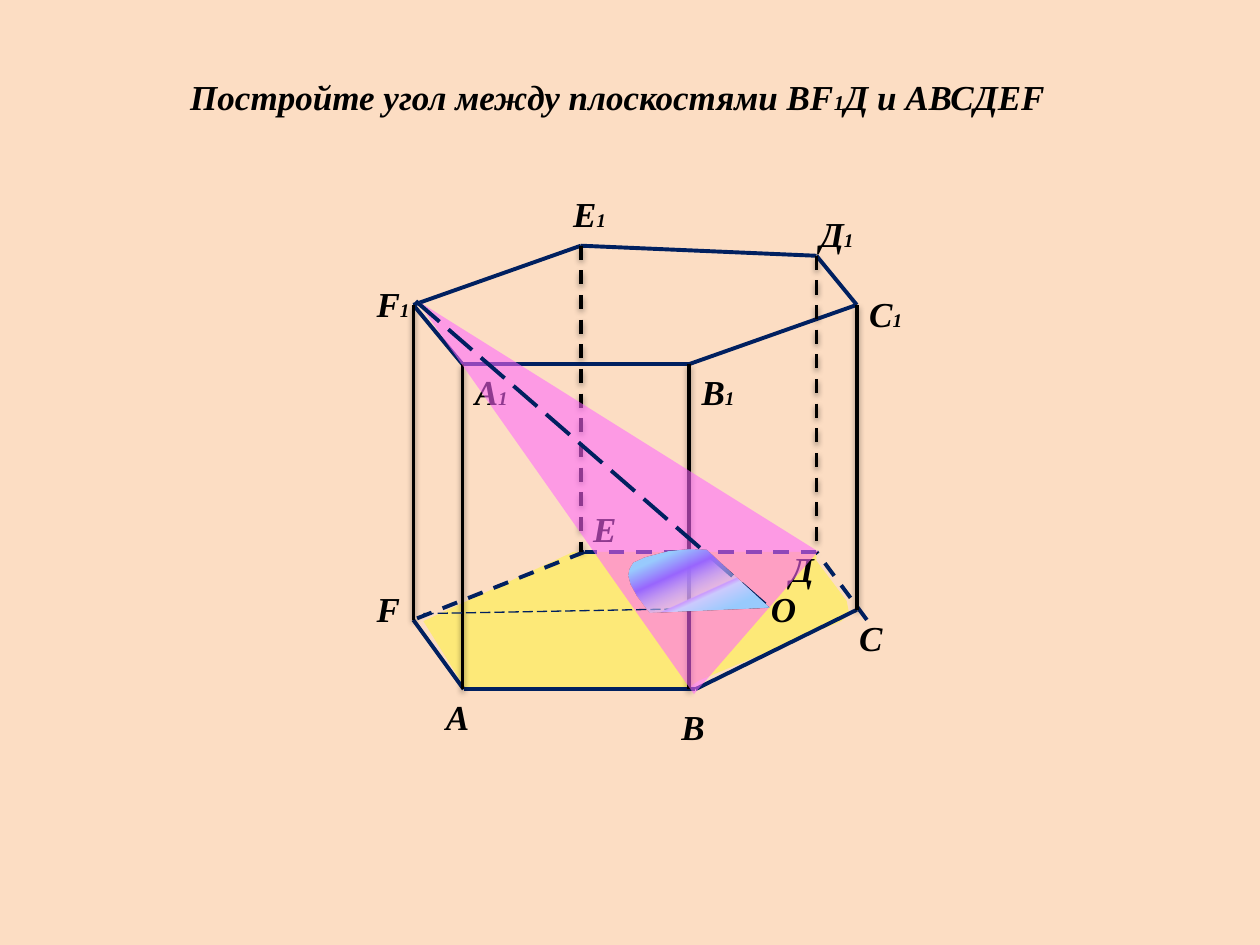
import pptx
import pptx.util
import pptx.dml.color
import pptx.enum.dml
import pptx.enum.shapes
import pptx.enum.text
import pptx.oxml
import pptx.oxml.ns

NAVY, BLACK = "002060", "000000"
DASH = pptx.enum.dml.MSO_LINE.DASH
LONG_DASH = pptx.enum.dml.MSO_LINE.LONG_DASH
NS = pptx.oxml.ns.nsdecls("a")


def paint(fill, color, alpha=None):
    fill.solid()
    fill.fore_color.rgb = pptx.dml.color.RGBColor.from_string(color)
    if alpha is not None:
        clr = fill._xPr.find(".//" + pptx.oxml.ns.qn("a:srgbClr"))
        clr.append(pptx.oxml.parse_xml(f'<a:alpha {NS} val="{alpha * 1000}"/>'))


def write(tf, text, size=20, sub_size=11):
    """Write text in one paragraph; pieces between underscores are set small."""
    tf.word_wrap = False
    tf.auto_size = pptx.enum.text.MSO_AUTO_SIZE.SHAPE_TO_FIT_TEXT
    tf.vertical_anchor = pptx.enum.text.MSO_ANCHOR.TOP
    p = tf.paragraphs[0]
    p.alignment = pptx.enum.text.PP_ALIGN.LEFT
    for i, piece in enumerate(text.split("_")):
        if piece:
            r = p.add_run()
            r.text = piece
            r.font.name = "Times New Roman"
            r.font.size = pptx.util.Pt(sub_size if i % 2 else size)
            r.font.bold = r.font.italic = True
            paint(r.font.fill, BLACK)


prs = pptx.Presentation()
prs.slide_width, prs.slide_height = pptx.util.Inches(10), pptx.util.Inches(7.5)
U = prs.slide_width // 100  # grid of 100 columns by 75 rows
s = prs.slides.add_slide(prs.slide_layouts[5])
paint(s.background.fill, "FCDDC3")

title = s.shapes.title
title.left, title.top, title.width, title.height = (
    int(v * U) for v in (14.1, 5.5, 70.9, 4.4))
write(title.text_frame, "Постройте угол между плоскостями ВF_1_Д и АВСДЕF", sub_size=12)

# Vertices of the prism in columns and rows
bottom = {"A": (36.8, 54.7), "B": (55.2, 54.7), "C": (68, 48.4),
          "D": (64.8, 43.8), "E": (46.4, 43.8), "F": (32.8, 49.2)}
top = {"A": (36.7, 28.9), "B": (54.7, 28.9), "C": (68, 24.2),
       "D": (64.8, 20.3), "E": (46.1, 19.5), "F": (32.8, 24.2)}
feet = {"A": 54.7, "B": 54.7, "C": 48.4, "D": 43.8, "E": 43.8, "F": 49.2}
O = (61, 48.2)

base_outline = [(33.6, 49.3), (36.9, 54.6), (54.6, 54.6), (55.5, 54), (66.8, 49.3),
                (67.4, 48.7), (67.2, 47.7), (64.8, 44.5), (64.8, 43.8), (45.5, 43.8)]
angle_outline = [(51.6, 48.6), (61.1, 48.2), (56.1, 43.7), (54.7, 43.66), (53.1, 43.8),
                 (51.2, 44.3), (50.3, 44.7), (50, 45.2), (49.9, 45.7), (50.1, 46.4),
                 (50.6, 47.3)]

# Edges: start, end, colour, width, dash, shadow
edges = []
for a, b in zip("ABCDEF", "BCDEFA"):
    hidden = a in "CDE"
    end = (68.8, 49.2) if a == "C" else bottom[a]  # CD runs a little past C
    edges.append((end, bottom[b], NAVY, 2.25, DASH if hidden else None, False))
    edges.append((top[a], top[b], NAVY, 2.25, None, False))
for v in "ABCDEF":
    edges.append((top[v], (top[v][0], feet[v]), BLACK, 2,
                  DASH if v in "DE" else None, True))
section_lines = [((33, 23.9), O, NAVY, 2.25, LONG_DASH, False),
                 ((33.6, 48.7), O, NAVY, 0.75, LONG_DASH, False)]

labels = [("А", 34.4, 54.7), ("А_1_", 36.7, 28.9), ("В", 53.1, 55.5), ("В_1_", 54.7, 28.9),
          ("С", 67.2, 48.4), ("С_1_", 68, 22.7), ("О", 60.2, 46.1), ("Д", 61.7, 43),
          ("Д_1_", 64.1, 16.4), ("Е", 46.1, 39.8), ("Е_1_", 44.5, 14.8),
          ("F", 28.9, 46.1), ("F_1_", 28.9, 21.9)]

SHADOW = ('<a:outerShdw blurRad="40000" dist="20000" dir="5400000" rotWithShape="0">'
          '<a:srgbClr val="000000"><a:alpha val="38000"/></a:srgbClr></a:outerShdw>')

# Back to front: base, prism edges, labels, section plane, its lines, angle
for layer in ("base", "edges", "labels", "plane", "section", "angle"):
    if layer in ("base", "angle"):
        points = [(int(x * U), int(y * U))
                  for x, y in (base_outline if layer == "base" else angle_outline)]
        builder = s.shapes.build_freeform(*points[0])
        builder.add_line_segments(points[1:], close=True)
        sp = builder.convert_to_shape()
        sp.shadow.inherit = False
        sp.line.fill.background()
        if layer == "base":
            paint(sp.fill, "FFFF00", 38)
    elif layer in ("edges", "section"):
        for start, end, color, width, dash, shadow in (
                edges if layer == "edges" else section_lines):
            line = s.shapes.add_connector(pptx.enum.shapes.MSO_CONNECTOR.STRAIGHT,
                                          *(int(v * U) for v in start + end))
            paint(line.line.fill, color)
            line.line.width = pptx.util.Pt(width)
            if dash:
                line.line.dash_style = dash
            line._element.spPr.append(pptx.oxml.parse_xml(
                f'<a:effectLst {NS}>{SHADOW if shadow else ""}</a:effectLst>'))
    elif layer == "labels":
        for text, x, y in labels:
            width = 4.7 if "_" in text else 3.9
            box = s.shapes.add_textbox(*(int(v * U) for v in (x, y, width, 4.4)))
            write(box.text_frame, text)
    else:
        plane = s.shapes.add_shape(pptx.enum.shapes.MSO_SHAPE.ISOSCELES_TRIANGLE,
                                   *(int(v * U) for v in (38.5, 18.7, 15, 37.1)))
        plane.adjustments[0] = 0.61
        plane.rotation = 311
        plane.shadow.inherit = False
        plane.line.fill.background()
        paint(plane.fill, "FF66FF", 56)

# The angle, drawn last, has a gradient with one half-clear stop
stops = [(18, "99CCFF", 100), (36, "9966FF", 100), (60, "CCCCFF", 51),
         (61, "CC99FF", 100), (65, "CCCCFF", 100), (82, "99CCFF", 100)]
sp.fill.gradient()
grad = sp._element.spPr.find(pptx.oxml.ns.qn("a:gradFill"))
gs = "".join(f'<a:gs pos="{pos * 1000}"><a:srgbClr val="{color}">'
             f'<a:alpha val="{alpha * 1000}"/></a:srgbClr></a:gs>'
             for pos, color, alpha in stops)
grad.getparent().replace(grad, pptx.oxml.parse_xml(
    f'<a:gradFill {NS}><a:gsLst>{gs}</a:gsLst>'
    f'<a:lin ang="{66 * 60000}" scaled="0"/></a:gradFill>'))

prs.save("out.pptx")
